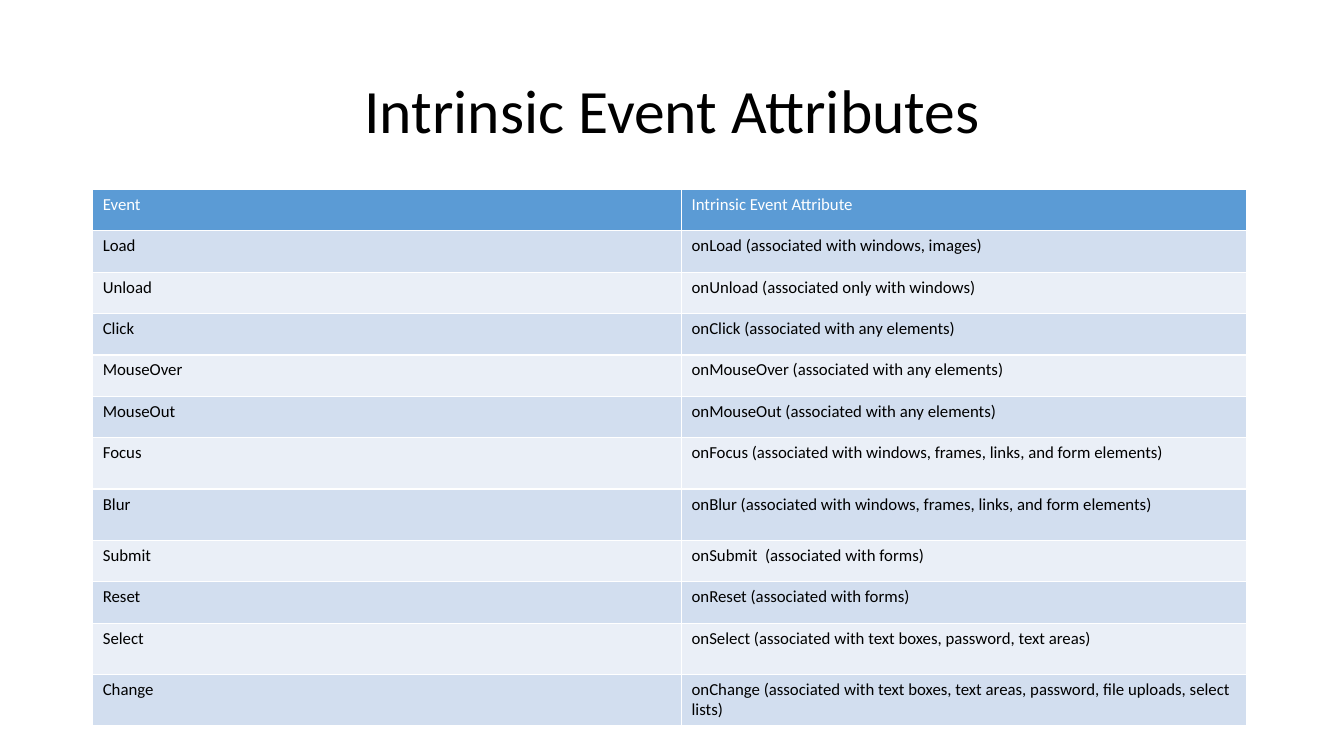
from pptx import Presentation
from pptx.dml.color import RGBColor
from pptx.enum.text import MSO_ANCHOR, PP_ALIGN
from pptx.util import Inches, Pt

BLACK = RGBColor(0x00, 0x00, 0x00)
WHITE = RGBColor(0xFF, 0xFF, 0xFF)
BLUE = RGBColor(0x5B, 0x9B, 0xD5)
BANDS = RGBColor(0xEA, 0xEF, 0xF7), RGBColor(0xD2, 0xDE, 0xEF)

LEFT = 6.9
COLS = 43.81, 42.01
SHORT, TALL = 5.47, 6.8
FORM = "associated with windows, frames, links, and form elements"

EVENTS = [
    ("Event", "Intrinsic Event Attribute", SHORT),
    ("Load", "onLoad (associated with windows, images)", SHORT),
    ("Unload", "onUnload (associated only with windows)", SHORT),
    ("Click", "onClick (associated with any elements)", SHORT),
    ("MouseOver", "onMouseOver (associated with any elements)", SHORT),
    ("MouseOut", "onMouseOut (associated with any elements)", SHORT),
    ("Focus", f"onFocus ({FORM})", TALL),
    ("Blur", f"onBlur ({FORM})", TALL),
    ("Submit", "onSubmit  (associated with forms)", SHORT),
    ("Reset", "onReset (associated with forms)", SHORT),
    ("Select", "onSelect (associated with text boxes, password, text areas)", TALL),
    ("Change", "onChange (associated with text boxes, text areas, password, "
               "file uploads, select lists)", TALL),
]


class Deck:
    def __init__(self, face):
        self.face = face
        self.show = Presentation()
        self.show.slide_width = Inches(13.33)
        self.show.slide_height = Inches(7.5)
        self.slide = self.show.slides.add_slide(self.show.slide_layouts[6])

    def across(self, share):
        return round(self.show.slide_width * share / 100)

    def down(self, share):
        return round(self.show.slide_height * share / 100)

    def box(self, left, top, width, height):
        return self.across(left), self.down(top), self.across(width), self.down(height)

    def label(self, frame, text, size, color):
        para = frame.paragraphs[0]
        run = para.add_run()
        run.text = text
        run.font.color.rgb = color
        for name, value in {"name": self.face, "size": Pt(size), "bold": False}.items():
            setattr(run.font, name, value)
        return para

    def title(self, text, *area):
        frame = self.slide.shapes.add_textbox(*self.box(*area)).text_frame
        for name, value in {"word_wrap": True, "vertical_anchor": MSO_ANCHOR.MIDDLE}.items():
            setattr(frame, name, value)
        para = self.label(frame, text, 44, BLACK)
        for name, value in {"alignment": PP_ALIGN.CENTER, "line_spacing": 0.9}.items():
            setattr(para, name, value)

    def table(self, rows, cols, left, top):
        area = self.box(left, top, sum(cols), sum(row[-1] for row in rows))
        grid = self.slide.shapes.add_table(len(rows), len(cols), *area).table
        for col, width in zip(grid.columns, cols):
            col.width = self.across(width)
        for i, (*texts, height) in enumerate(rows):
            grid.rows[i].height = self.down(height)
            fill, ink = (BANDS[i % 2], BLACK) if i else (BLUE, WHITE)
            for cell, text in zip(grid.rows[i].cells, texts):
                cell.fill.solid()
                cell.fill.fore_color.rgb = fill
                self.label(cell.text_frame, text, 12, ink)


def main():
    deck = Deck("Calibri")
    deck.title("Intrinsic Event Attributes", LEFT, 5.33, 86.27, 19.33)
    deck.table(EVENTS, COLS, LEFT, 25.07)
    deck.show.save("out.pptx")


if __name__ == "__main__":
    main()
